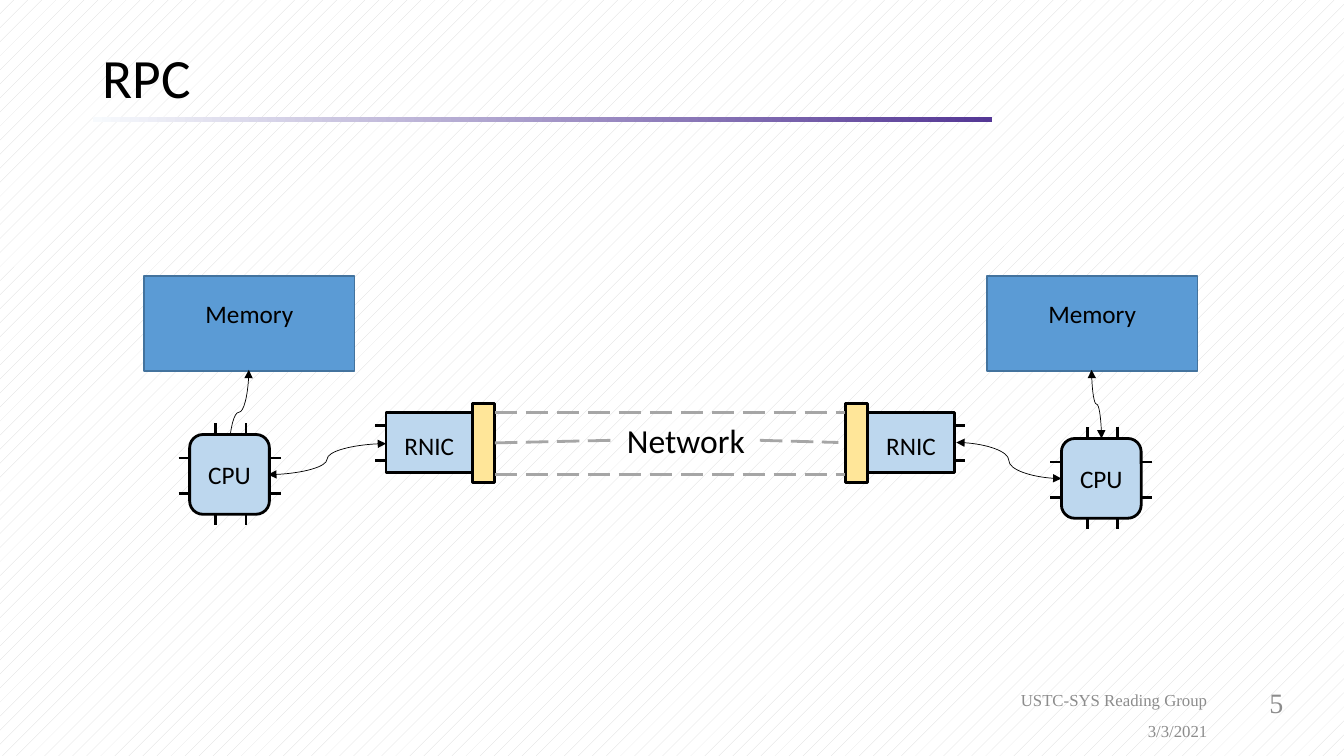
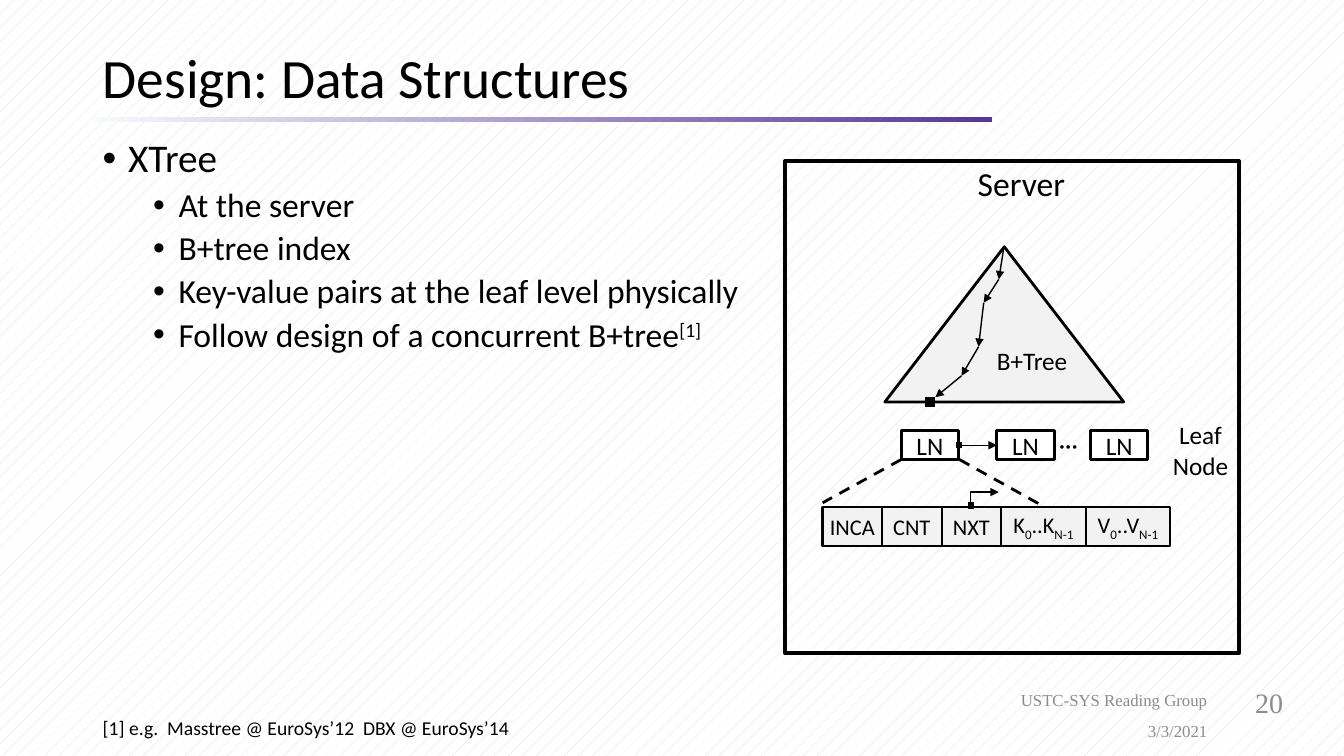
"""Build two slides on remote memory access: an RPC diagram and the XTree design."""
from itertools import pairwise

from lxml import etree
from pptx import Presentation
from pptx.dml.color import RGBColor
from pptx.enum.dml import MSO_LINE, MSO_PATTERN
from pptx.enum.shapes import MSO_CONNECTOR, MSO_SHAPE
from pptx.enum.text import MSO_ANCHOR, PP_ALIGN
from pptx.oxml.ns import qn
from pptx.util import Cm, Pt

RECTANGLE = MSO_SHAPE.RECTANGLE
ROUNDED = MSO_SHAPE.ROUNDED_RECTANGLE
TRIANGLE = MSO_SHAPE.ISOSCELES_TRIANGLE
STRAIGHT = MSO_CONNECTOR.STRAIGHT
CURVE = MSO_CONNECTOR.CURVE
ELBOW = MSO_CONNECTOR.ELBOW
DASH = MSO_LINE.DASH
LONG_DASH = MSO_LINE.LONG_DASH
LEFT, CENTER, RIGHT = PP_ALIGN.LEFT, PP_ALIGN.CENTER, PP_ALIGN.RIGHT
TOP, MIDDLE, BOTTOM = MSO_ANCHOR.TOP, MSO_ANCHOR.MIDDLE, MSO_ANCHOR.BOTTOM
SIDE_LEFT, SIDE_RIGHT = 1, 3

BLACK, WHITE, GRAY = "000000", "FFFFFF", "8C8C8C"
CHIP_BLUE, PORT_YELLOW, CABLE_GRAY = "BDD7EE", "FFE699", "A6A6A6"
MEMORY_BLUE, MEMORY_EDGE, PALE_GRAY = "5B9BD5", "43739E", "F2F2F2"
BODY_FONT, FOOTER_FONT = "Calibri", "Times New Roman"
color = RGBColor.from_string


def add_box(slide, left, top, width, height, runs=(), size=18, kind=None, fill=None,
            line=None, weight=2, align=CENTER, anchor=MIDDLE, font=BODY_FONT, ink=BLACK):
    """Add a text box, or a preset shape of the given kind, with one paragraph of (text, baseline) runs."""
    frame = Cm(left), Cm(top), Cm(width), Cm(height)
    if kind is None:
        shape = slide.shapes.add_textbox(*frame)
    else:
        shape = slide.shapes.add_shape(kind, *frame)
        shape.shadow.inherit = False
        text_frame = shape.text_frame
        text_frame.margin_left = text_frame.margin_right = 0
        text_frame.margin_top = text_frame.margin_bottom = 0
    if fill:
        shape.fill.solid()
        shape.fill.fore_color.rgb = color(fill)
    else:
        shape.fill.background()
    if line:
        shape.line.color.rgb = color(line)
        shape.line.width = Pt(weight)
    else:
        shape.line.fill.background()
    shape.text_frame.word_wrap = True
    shape.text_frame.vertical_anchor = anchor
    paragraph = shape.text_frame.paragraphs[0]
    paragraph.alignment = align
    for text, baseline in runs:
        run = paragraph.add_run()
        run.text = text
        run.font.name = font
        run.font.size = Pt(size)
        run.font.color.rgb = color(ink)
        if baseline:
            run._r.get_or_add_rPr().set("baseline", str(baseline * 1000))
    return shape


def add_line(slide, start, end, weight=2, ink=BLACK, dash=None, arrows=(), kind=STRAIGHT, upright=False):
    """Add a connector; an upright one leaves its start vertically, by a quarter turn."""
    (x1, y1), (x2, y2) = start, end
    if upright:
        middle_x, middle_y = (x1 + x2) / 2, (y1 + y2) / 2
        half_x, half_y = (y2 - y1) / 2, (x1 - x2) / 2
        x1, y1 = middle_x - half_x, middle_y - half_y
        x2, y2 = middle_x + half_x, middle_y + half_y
    connector = slide.shapes.add_connector(kind, Cm(x1), Cm(y1), Cm(x2), Cm(y2))
    connector.line.color.rgb = color(ink)
    connector.line.width = Pt(weight)
    if dash:
        connector.line.dash_style = dash
    properties = connector._element.spPr
    if upright:
        properties.find(qn("a:xfrm")).set("rot", "5400000")
    for arrow in arrows:
        etree.SubElement(properties.find(qn("a:ln")), qn(f"a:{arrow}"), type="triangle")
    etree.SubElement(properties, qn("a:effectLst"))
    return connector


presentation = Presentation()
presentation.slide_width = Cm(33.87)
presentation.slide_height = Cm(19.05)
blank_layout = presentation.slide_layouts[6]

background = presentation.slide_master.background.fill
background.patterned()
background.pattern = MSO_PATTERN.PERCENT_5
background.fore_color.rgb = color("D9D9D9")
background.back_color.rgb = color(WHITE)

slides = []
for title, number in (("RPC", "5"), ("Design: Data Structures", "20")):
    slide = presentation.slides.add_slide(blank_layout)
    rule = add_box(slide, 2.34, 2.95, 22.66, 0.13, kind=RECTANGLE)
    rule.fill.gradient()
    rule.fill.gradient_angle = 0
    for stop, position, shade in zip(rule.fill.gradient_stops, (0, 1), ("F7FAFD", "543795")):
        stop.position = position
        stop.color.rgb = color(shade)
    heading = add_box(slide, 2.34, 1.09, 29.21, 1.9, [(title, 0)], 39.6, align=LEFT)
    heading.text_frame.paragraphs[0].line_spacing = 0.9
    for left, top, width, height, text, size in (
        (24.97, 17.3, 7.62, 0.81, number, 20),
        (19.25, 17.3, 11.43, 0.66, "USTC-SYS Reading Group", 12),
        (23.06, 18.06, 7.62, 0.71, "3/3/2021", 12),
    ):
        add_box(slide, left, top, width, height, [(text, 0)], size,
                align=RIGHT, font=FOOTER_FONT, ink=GRAY)
    slides.append(slide)
rpc_slide, design_slide = slides

BOTH_ENDS = ("headEnd", "tailEnd")
CPU_SIZE, PIN = 2.01, 0.28

ports = []
for card_left, port_left, pin_start, pin_end in (
    (9.73, 11.91, 9.73, 9.45),
    (21.87, 21.31, 24.05, 24.33),
):
    for pin_top in (10.72, 11.6):
        add_line(rpc_slide, (pin_start, pin_top), (pin_end, pin_top))
    card = add_box(rpc_slide, card_left, 10.4, 2.18, 1.5, [("RNIC", 0)],
                   kind=RECTANGLE, fill=CHIP_BLUE, line=BLACK)
    card.text_frame.margin_top = Cm(0.13)
    ports.append(add_box(rpc_slide, port_left, 10.16, 0.56, 2, kind=RECTANGLE,
                         fill=PORT_YELLOW, line=BLACK))

for cable_top in (10.39, 11.96):
    add_line(rpc_slide, (12.47, cable_top), (21.29, cable_top), ink=CABLE_GRAY, dash=LONG_DASH)
network = add_box(rpc_slide, 15.42, 10.46, 3.73, 1.27, [("Network", 0)], 24)
cable = add_line(rpc_slide, (12.47, 11.16), (15.42, 11.1), ink=CABLE_GRAY, dash=LONG_DASH)
cable.begin_connect(ports[0], SIDE_RIGHT)
cable.end_connect(network, SIDE_LEFT)
cable = add_line(rpc_slide, (19.15, 11.1), (21.13, 11.15), ink=CABLE_GRAY, dash=LONG_DASH)
cable.begin_connect(network, SIDE_RIGHT)

for memory_left, cpu_left, cpu_top, memory_end, cpu_end in (
    (3.63, 4.78, 10.95, (6.27, 9.32), (5.77, 11.46)),
    (24.87, 26.75, 11.05, (27.51, 9.32), (27.76, 11.05)),
):
    memory = add_box(rpc_slide, memory_left, 6.96, 5.31, 2.39, [("Memory", 0)],
                     kind=RECTANGLE, fill=MEMORY_BLUE, line=MEMORY_EDGE, weight=1)
    memory.text_frame.margin_bottom = Cm(0.5)
    add_line(rpc_slide, memory_end, cpu_end, 0.5, arrows=BOTH_ENDS, kind=CURVE, upright=True)
    add_box(rpc_slide, cpu_left, cpu_top, CPU_SIZE, CPU_SIZE, [("CPU", 0)],
            kind=ROUNDED, fill=CHIP_BLUE, line=BLACK)
    for edge in (-PIN, CPU_SIZE):
        for offset in (0.59, 1.48):
            pin_left, pin_top = cpu_left + edge, cpu_top + offset
            add_line(rpc_slide, (pin_left, pin_top), (pin_left + PIN, pin_top))
        for offset in (0.66, 1.42):
            pin_left, pin_top = cpu_left + offset, cpu_top + edge
            add_line(rpc_slide, (pin_left, pin_top), (pin_left, pin_top + PIN))

for card_end, cpu_end in (((9.73, 11.18), (6.76, 11.96)), ((24.1, 11.15), (26.75, 12.06))):
    add_line(rpc_slide, card_end, cpu_end, 0.5, arrows=BOTH_ENDS, kind=CURVE)

body = add_box(design_slide, 2.34, 3.38, 29.21, 13.79, align=LEFT, anchor=TOP).text_frame
for index, (level, runs) in enumerate((
    (0, [("XTree", 0)]),
    (1, [("At the server", 0)]),
    (1, [("B+tree index", 0)]),
    (1, [("Key-value pairs at the leaf level physically", 0)]),
    (1, [("Follow design of a concurrent B+tree", 0), ("[1]", 30)]),
)):
    paragraph = body.add_paragraph() if index else body.paragraphs[0]
    paragraph.level = level
    paragraph.line_spacing = 0.9
    if index:
        paragraph.space_before = Pt(5)
    properties = paragraph._p.get_or_add_pPr()
    properties.set("marL", str(Cm(0.64 + 1.27 * level)))
    properties.set("indent", str(-Cm(0.64)))
    etree.SubElement(properties, qn("a:buFont"), typeface="Arial")
    etree.SubElement(properties, qn("a:buChar"), char="•")
    for text, baseline in runs:
        run = paragraph.add_run()
        run.text = text
        run.font.name = BODY_FONT
        run.font.size = Pt(24 if level else 28)
        run.font.color.rgb = color(BLACK)
        if baseline:
            run._r.get_or_add_rPr().set("baseline", str(baseline * 1000))

add_box(design_slide, 2.34, 17.3, 16.46, 1.47,
        [("[1] e.g.  Masstree @ EuroSys’12  DBX @ EuroSys’14", 0)], 14, align=LEFT, anchor=BOTTOM)

add_box(design_slide, 22.3, 6.22, 6.02, 3.91, kind=TRIANGLE, fill=PALE_GRAY, line=BLACK)
search_path = ((25.3, 6.22), (25.17, 7.04), (24.79, 7.63), (24.66, 8.74), (24.23, 9.47), (23.57, 10.01))
for start, end in pairwise(search_path):
    add_line(design_slide, start, end, 1, arrows=("tailEnd",))
add_box(design_slide, 19.79, 4.06, 11.43, 12.4, kind=RECTANGLE, line=BLACK, weight=3)

leaves = [
    add_box(design_slide, left, 10.85, 1.45, 0.74, [("LN", 0)], kind=RECTANGLE, fill=WHITE, line=BLACK)
    for left in (22.71, 25.12, 27.48)
]
next_leaf = add_line(design_slide, (24.16, 11.22), (25.12, 11.22), 1, arrows=("tailEnd",))
next_leaf.begin_connect(leaves[0], SIDE_RIGHT)
next_leaf.end_connect(leaves[1], SIDE_LEFT)

for start, end in (((22.71, 11.58), (20.73, 12.67)), ((24.18, 11.58), (26.19, 12.7))):
    add_line(design_slide, start, end, dash=DASH)

field_left = 20.73
for width, runs in (
    (1.5, [("INCA", 0)]),
    (1.5, [("CNT", 0)]),
    (1.5, [("NXT", 0)]),
    (2.13, [("K", 0), ("0", -25), ("..K", 0), ("N-1", -25)]),
    (2.13, [("V", 0), ("0", -25), ("..V", 0), ("N-1", -25)]),
):
    add_box(design_slide, field_left, 12.78, width, 0.99, runs, 16,
            kind=RECTANGLE, fill=PALE_GRAY, line=BLACK, weight=1.5)
    field_left += width

for left, top, size in ((23.32, 10.01, 0.23), (24.1, 11.15, 0.13), (24.41, 12.67, 0.13)):
    add_box(design_slide, left, top, size, size, kind=RECTANGLE, fill=BLACK, line=BLACK, weight=1)
next_pointer = add_line(design_slide, (24.46, 12.67), (25.17, 12.4), 1,
                        arrows=("tailEnd",), kind=ELBOW, upright=True)
next_pointer._element.spPr.find(qn("a:prstGeom")).set("prst", "bentConnector2")

for left, top, width, height, text, size in (
    (24.23, 3.99, 3.02, 1.27, "Server", 24),
    (24.79, 8.59, 2.44, 0.97, "B+Tree", 18),
    (25.63, 10.69, 2.59, 1.02, "···", 18),
    (28.96, 10.44, 2.59, 1.8, "Leaf Node", 18),
):
    add_box(design_slide, left, top, width, height, [(text, 0)], size)

presentation.save("out.pptx")
